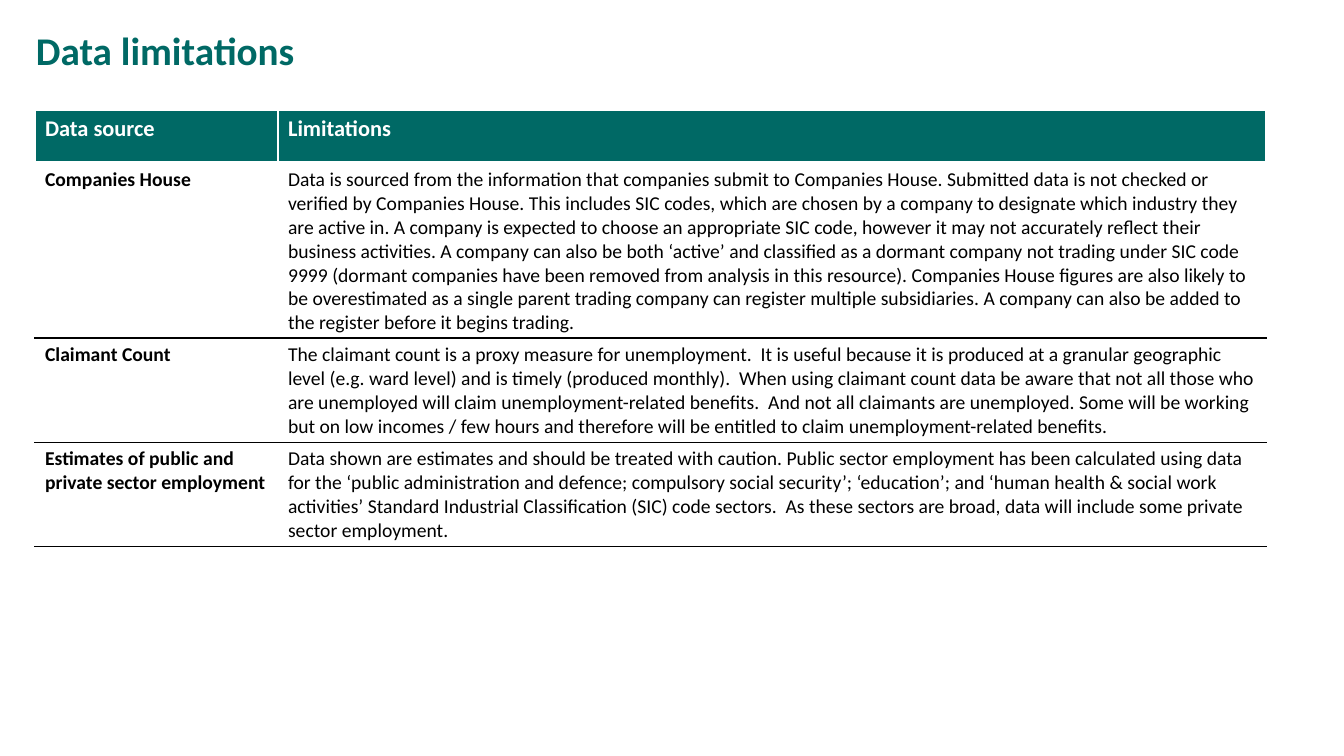
from lxml import etree
from pptx import Presentation
from pptx import util as u
from pptx.dml.color import RGBColor
from pptx.enum import text
from pptx.oxml import ns

# Content
TITLE = "Data limitations"
ROWS = [
    ("Data source", "Limitations"),
    ("Companies House",
     "Data is sourced from the information that companies submit to Companies House. "
     "Submitted data is not checked or verified by Companies House. This includes SIC codes, "
     "which are chosen by a company to designate which industry they are active in. "
     "A company is expected to choose an appropriate SIC code, however it may not accurately "
     "reflect their business activities. A company can also be both ‘active’ and classified as "
     "a dormant company not trading under SIC code 9999 (dormant companies have been removed "
     "from analysis in this resource). Companies House figures are also likely to be "
     "overestimated as a single parent trading company can register multiple subsidiaries. "
     "A company can also be added to the register before it begins trading."),
    ("Claimant Count",
     "The claimant count is a proxy measure for unemployment.  It is useful because it is "
     "produced at a granular geographic level (e.g. ward level) and is timely (produced "
     "monthly).  When using claimant count data be aware that not all those who are unemployed "
     "will claim unemployment-related benefits.  And not all claimants are unemployed. Some "
     "will be working but on low incomes / few hours and therefore will be entitled to claim "
     "unemployment-related benefits."),
    ("Estimates of public and private sector employment",
     "Data shown are estimates and should be treated with caution. Public sector employment "
     "has been calculated using data for the ‘public administration and defence; compulsory "
     "social security’; ‘education’; and ‘human health & social work activities’ Standard "
     "Industrial Classification (SIC) code sectors.  As these sectors are broad, data will "
     "include some private sector employment."),
]

# Layout in px and formats
SLIDE = (1344, 756)
TITLE_BOX = (26, 26, 1159, 53)
TABLE_AT = (35, 110)
COLUMNS = (243, 988)
HEIGHTS = (53, 175, 104, 104)
COLOURS = {"teal": "006965", "white": "FFFFFF", "black": "000000"}
FORMATS = {
    "title": {"size": u.Pt(28), "bold": True, "colour": "teal"},
    "header": {"size": u.Pt(16), "bold": True, "colour": "white"},
    "source": {"size": u.Pt(14), "bold": True, "colour": "black"},
    "limits": {"size": u.Pt(14), "bold": False, "colour": "black"},
}
# Border colour and width in points, per side
HEADER_EDGES = {"L": ("white", 1), "R": ("white", 1), "T": ("white", 1), "B": ("white", 3)}
FIRST_EDGES = {**HEADER_EDGES, "B": ("black", 1)}
BODY_EDGES = {**FIRST_EDGES, "T": ("black", 1)}


def px(*lengths):
    return [u.Emu(round(n * 914400 / 100.8)) for n in lengths]


def write(frame, words, style):
    paragraph = frame.paragraphs[0]
    run = paragraph.add_run()
    run.text = words
    run.font.name = "Calibri"
    for key, value in FORMATS[style].items():
        if key == "colour":
            run.font.color.rgb = RGBColor.from_string(COLOURS[value])
        else:
            setattr(run.font, key, value)
    return paragraph


def draw_edges(cell, edges):
    props = cell._tc.get_or_add_tcPr()
    for side, (colour, width) in edges.items():
        line = etree.SubElement(props, ns.qn(f"a:ln{side}"), w=str(u.Pt(width)))
        fill = etree.SubElement(line, ns.qn("a:solidFill"))
        etree.SubElement(fill, ns.qn("a:srgbClr"), val=COLOURS[colour])


def main():
    deck = Presentation()
    deck.slide_width, deck.slide_height = px(*SLIDE)
    slide = deck.slides.add_slide(deck.slide_layouts[6])

    # Title
    heading = slide.shapes.add_textbox(*px(*TITLE_BOX)).text_frame
    heading.word_wrap = True
    heading.vertical_anchor = text.MSO_ANCHOR.MIDDLE
    write(heading, TITLE, "title").line_spacing = 0.9

    # Table grid
    limitations = slide.shapes.add_table(
        len(ROWS), len(COLUMNS), *px(*TABLE_AT, sum(COLUMNS), sum(HEIGHTS))).table
    limitations.first_row = limitations.horz_banding = False
    for column, width in zip(limitations.columns, px(*COLUMNS)):
        column.width = width
    for row, height in zip(limitations.rows, px(*HEIGHTS)):
        row.height = height

    # Table cells
    for r, entry in enumerate(ROWS):
        edges = (HEADER_EDGES, FIRST_EDGES, BODY_EDGES)[min(r, 2)]
        for c, words in enumerate(entry):
            cell = limitations.cell(r, c)
            draw_edges(cell, edges)
            if r == 0:
                cell.fill.solid()
                cell.fill.fore_color.rgb = RGBColor.from_string(COLOURS["teal"])
            else:
                cell.fill.background()
            write(cell.text_frame, words, ("source", "limits")[c] if r else "header")

    deck.save("out.pptx")


if __name__ == "__main__":
    main()
